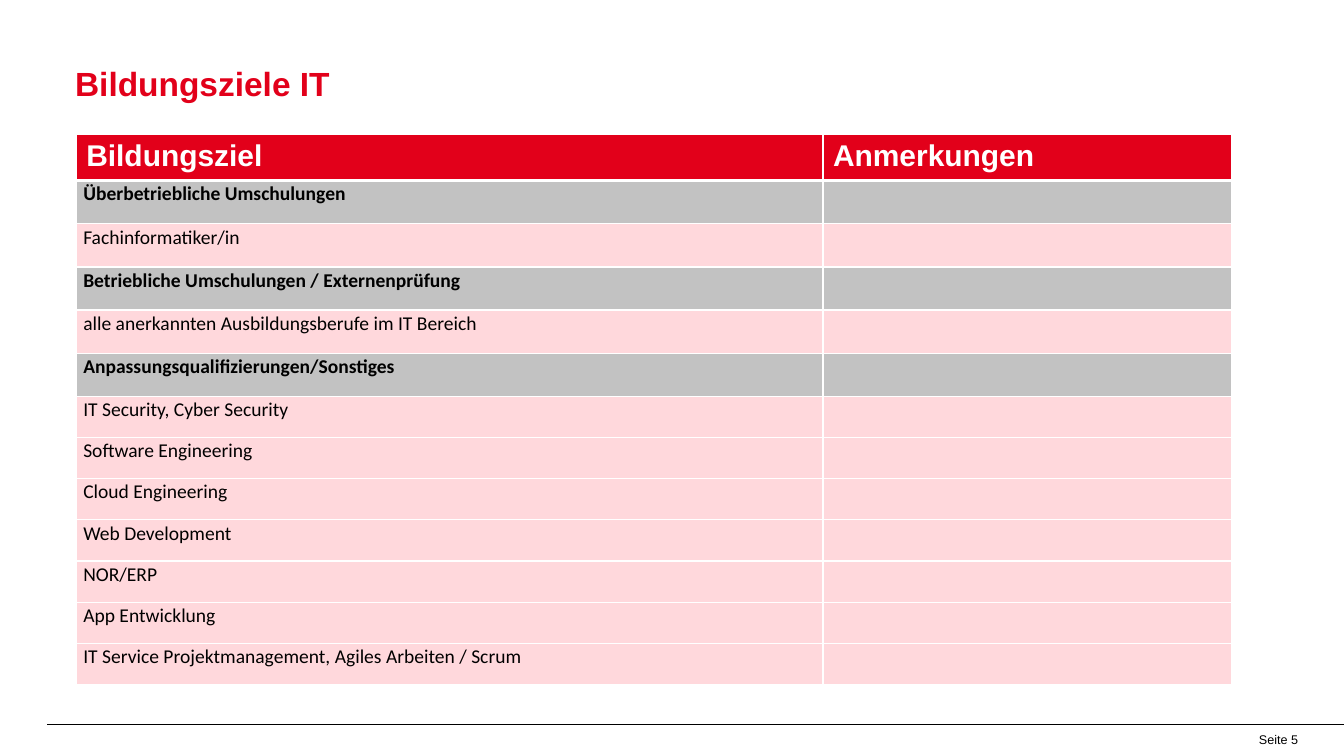
from lxml import etree
from pptx import Presentation
from pptx.dml.color import RGBColor
from pptx.enum.shapes import MSO_CONNECTOR
from pptx.enum.text import MSO_ANCHOR, PP_ALIGN
from pptx.oxml.ns import qn
from pptx.util import Inches, Pt

STRAIGHT = MSO_CONNECTOR.STRAIGHT
MIDDLE = MSO_ANCHOR.MIDDLE
LEFT, RIGHT = PP_ALIGN.LEFT, PP_ALIGN.RIGHT
RED, GREY, PINK = "E2001A", "C2C2C2", "FFD8DC"
WHITE, BLACK = "FFFFFF", "000000"


def write(frame, text, size, font="Arial", color=BLACK, bold=False, align=LEFT, spacing=1.0):
    frame.word_wrap = True
    paragraph = frame.paragraphs[0]
    paragraph.alignment = align
    paragraph.line_spacing = spacing
    run = paragraph.add_run()
    run.text = text
    run.font.size = Pt(size)
    run.font.name = font
    run.font.bold = bold
    run.font.color.rgb = RGBColor.from_string(color)


def style_cell(cell, fill, top=1, bottom=1):
    properties = cell._tc.get_or_add_tcPr()
    for side, width in (("lnL", 1), ("lnR", 1), ("lnT", top), ("lnB", bottom)):
        border = etree.SubElement(properties, qn(f"a:{side}"), w=str(Pt(width)))
        solid = etree.SubElement(border, qn("a:solidFill"))
        etree.SubElement(solid, qn("a:srgbClr"), val=WHITE)
    cell.fill.solid()
    cell.fill.fore_color.rgb = RGBColor.from_string(fill)


prs = Presentation()
prs.slide_width, prs.slide_height = Inches(13.39), Inches(7.53)
slide = prs.slides.add_slide(prs.slide_layouts[6])

# Footer line and page number
footer_line = slide.shapes.add_connector(
    STRAIGHT, Inches(0.47), Inches(7.22), Inches(13.39), Inches(7.22))
footer_line.line.color.rgb = RGBColor.from_string(BLACK)
footer_line.line.width = Pt(0.5)
etree.SubElement(footer_line._element.spPr, qn("a:effectLst"))

page_number = slide.shapes.add_textbox(Inches(12.09), Inches(7.22), Inches(0.94), Inches(0.3))
page_number.text_frame.vertical_anchor = MIDDLE
write(page_number.text_frame, "Seite 5", 9, align=RIGHT)

# Title
title = slide.shapes.add_textbox(Inches(0.65), Inches(0.58), Inches(12.27), Inches(0.5))
write(title.text_frame, "Bildungsziele IT", 24, color=RED, bold=True)

# Training goals by group
groups = [
    ("Überbetriebliche Umschulungen", ["Fachinformatiker/in"]),
    ("Betriebliche Umschulungen / Externenprüfung",
     ["alle anerkannten Ausbildungsberufe im IT Bereich"]),
    ("Anpassungsqualifizierungen/Sonstiges", [
        "IT Security, Cyber Security",
        "Software Engineering",
        "Cloud Engineering",
        "Web Development",
        "NOR/ERP",
        "App Entwicklung",
        "IT Service Projektmanagement, Agiles Arbeiten / Scrum",
    ]),
]
goals = []
for group, members in groups:
    goals.append((group, True))
    goals += [(member, False) for member in members]

# Table with a taller upper part
table = slide.shapes.add_table(
    len(goals) + 1, 2, Inches(0.76), Inches(1.34), Inches(11.51), Inches(5.43)).table
table.columns[0].width = Inches(7.44)
table.columns[1].width = Inches(4.07)
for index, row in enumerate(table.rows):
    row.height = Inches(0.43 if index < 6 else 0.41)

for column, heading in enumerate(["Bildungsziel", "Anmerkungen"]):
    cell = table.cell(0, column)
    style_cell(cell, RED, bottom=3)
    write(cell.text_frame, heading, 21.5, color=WHITE, bold=True)

for index, (goal, is_group) in enumerate(goals, start=1):
    for cell in table.rows[index].cells:
        style_cell(cell, GREY if is_group else PINK, top=3 if index == 1 else 1)
    goal_cell = table.cell(index, 0)
    goal_cell.margin_left = goal_cell.margin_right = Inches(0.07)
    goal_cell.margin_top = goal_cell.margin_bottom = 0
    write(goal_cell.text_frame, goal, 14, font="Calibri", bold=is_group, spacing=1.07)

prs.save("out.pptx")
